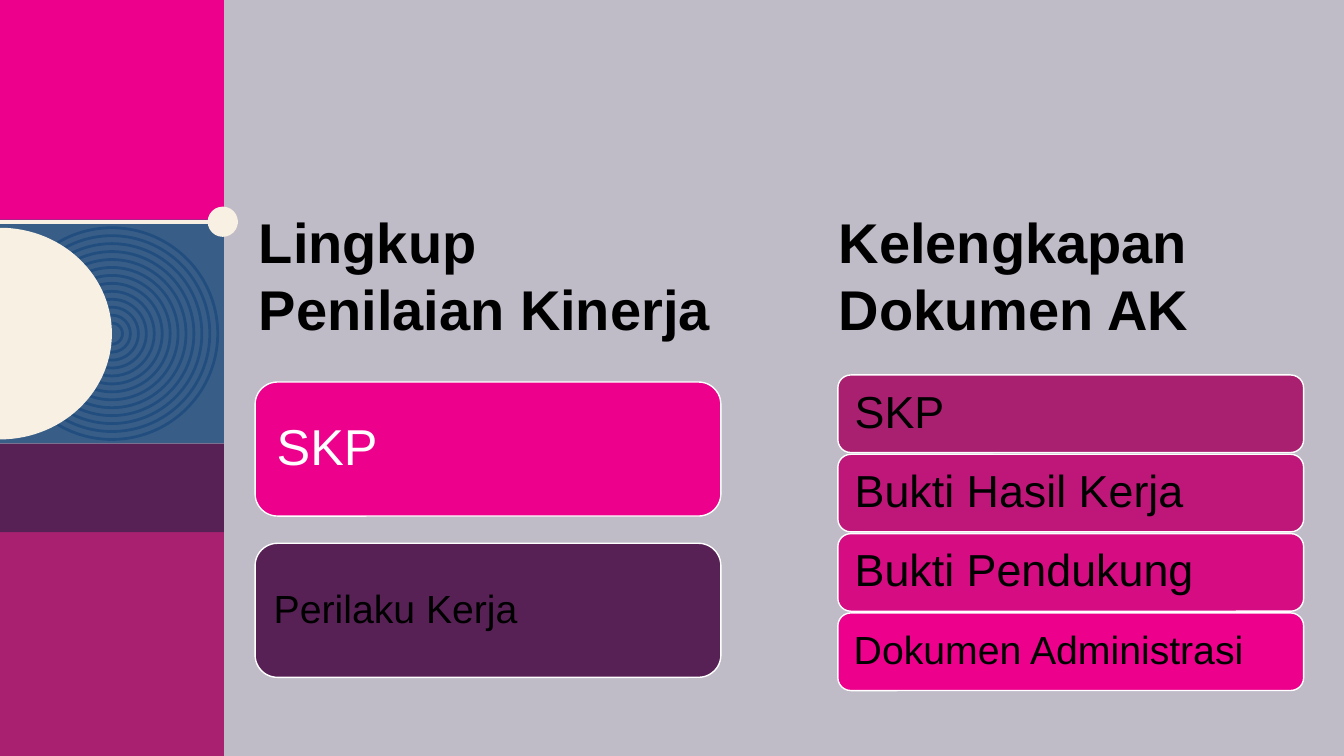
import math
from pptx import Presentation, util as u
from pptx.dml.color import RGBColor
from pptx.enum import shapes, text
from pptx.oxml.ns import qn
from lxml import etree

PINK, MAGENTA, PLUM = "EC008C", "AA2070", "582156"
BLUE, RING, CREAM = "385E88", "224E7F", "F8F0E3"
BLACK, WHITE, BACKGROUND = "000000", "FFFFFF", "BFBBC7"

# Side band: top, height, colour
BAND_WIDTH = 2.22
BAND = [(0, 2.22, PINK), (5.28, 2.22, MAGENTA), (2.18, 2.22, BLUE), (4.4, 0.88, PLUM)]
RING_COUNT, RING_OUTER, RING_INNER = 13, 2.1, 0.21
RING_CENTRE = (BAND_WIDTH / 2, 3.31)
RULE_Y, KNOB = 2.2, 0.3

# Cards: label, fill, text colour, size, inset
COLUMNS = [
    dict(heading=["Lingkup", "Penilaian Kinerja"], heading_left=2.47,
         left=2.53, top=3.79, height=1.33, pitch=1.6,
         cards=[("SKP", PINK, WHITE, 36, 0.15),
                ("Perilaku Kerja", PLUM, BLACK, 28, 0.12)]),
    dict(heading=["Kelengkapan Dokumen AK"], heading_left=8.22,
         left=8.31, top=3.72, height=0.77, pitch=0.787,
         cards=[("SKP", MAGENTA, BLACK, 32, 0.13),
                ("Bukti Hasil Kerja", "BF1779", BLACK, 32, 0.13),
                ("Bukti Pendukung", "D50C82", BLACK, 32, 0.13),
                ("Dokumen Administrasi", PINK, BLACK, 28, 0.12)]),
]
CARD_WIDTH = 4.62
HEADING_TOP, HEADING_WIDTH, HEADING_HEIGHT = 2.01, 5.75, 1.45


def colour(hex_string):
    return RGBColor.from_string(hex_string)


def paint(shape, fill=None, line=None, weight=1):
    shape.shadow.inherit = False
    if fill:
        shape.fill.solid()
        shape.fill.fore_color.rgb = colour(fill)
    else:
        shape.fill.background()
    if line:
        shape.line.color.rgb = colour(line)
        shape.line.width = u.Pt(weight)
    else:
        shape.line.fill.background()


def add_preset(slide, kind, left, top, width, height, **look):
    shape = slide.shapes.add_shape(kind, *map(u.Inches, (left, top, width, height)))
    paint(shape, **look)
    return shape


def write(shape, lines, size, ink=BLACK, bold=False, inset=None,
          anchor=text.MSO_ANCHOR.TOP, spacing=None):
    frame = shape.text_frame
    frame.word_wrap = True
    frame.vertical_anchor = anchor
    if inset is not None:
        frame.margin_left = frame.margin_right = u.Inches(inset)
        frame.margin_top = frame.margin_bottom = u.Inches(inset)
    for index, line in enumerate(lines):
        paragraph = frame.paragraphs[0] if index == 0 else frame.add_paragraph()
        paragraph.alignment = text.PP_ALIGN.LEFT
        paragraph.line_spacing = spacing
        run = paragraph.add_run()
        run.text = line
        run.font.name, run.font.size, run.font.bold = "Arial", u.Pt(size), bold
        run.font.color.rgb = colour(ink)


def add_half_disc(slide, centre_y, radius_x, radius_y, fill, steps=60):
    """Right half of an ellipse whose flat side lies on the slide's left edge."""
    angles = [math.pi * (step / steps - 0.5) for step in range(steps + 1)]
    points = [(u.Inches(radius_x * math.cos(a)), u.Inches(centre_y + radius_y * math.sin(a)))
              for a in angles]
    builder = slide.shapes.build_freeform(*points[0])
    builder.add_line_segments(points[1:], close=True)
    paint(builder.convert_to_shape(), fill=fill)


def add_side_band(slide):
    rect, oval = shapes.MSO_SHAPE.RECTANGLE, shapes.MSO_SHAPE.OVAL
    for top, height, fill in BAND:
        add_preset(slide, rect, 0, top, BAND_WIDTH, height, fill=fill)
    centre_x, centre_y = RING_CENTRE
    step = (RING_OUTER - RING_INNER) / (RING_COUNT - 1)
    for index in range(RING_COUNT):
        size = RING_OUTER - index * step
        add_preset(slide, oval, centre_x - size / 2, centre_y - size / 2, size, size,
                   line=RING, weight=2)
    add_half_disc(slide, centre_y, BAND_WIDTH / 2, RING_OUTER / 2, CREAM)

    knob_left = BAND_WIDTH - KNOB / 2 - 0.01
    rule = slide.shapes.add_connector(
        shapes.MSO_CONNECTOR.STRAIGHT, 0, u.Inches(RULE_Y),
        u.Inches(knob_left + KNOB), u.Inches(RULE_Y))
    rule.line.color.rgb = colour(CREAM)
    rule.line.width = u.Pt(3)
    etree.SubElement(rule._element.spPr, qn("a:effectLst"))
    add_preset(slide, oval, knob_left, RULE_Y - KNOB / 2, KNOB, KNOB, fill=CREAM)


def add_column(slide, column):
    heading = slide.shapes.add_textbox(*map(u.Inches, (
        column["heading_left"], HEADING_TOP, HEADING_WIDTH, HEADING_HEIGHT)))
    write(heading, column["heading"], 40, bold=True)
    for row, (label, fill, ink, size, inset) in enumerate(column["cards"]):
        card = add_preset(slide, shapes.MSO_SHAPE.ROUNDED_RECTANGLE, column["left"],
                          column["top"] + row * column["pitch"], CARD_WIDTH,
                          column["height"], fill=fill, line=WHITE)
        write(card, [label], size, ink=ink, inset=inset,
              anchor=text.MSO_ANCHOR.MIDDLE, spacing=0.9)


def main():
    deck = Presentation()
    deck.slide_width, deck.slide_height = u.Inches(13.33), u.Inches(7.5)
    slide = deck.slides.add_slide(deck.slide_layouts[6])
    slide.background.fill.solid()
    slide.background.fill.fore_color.rgb = colour(BACKGROUND)
    add_side_band(slide)
    for column in COLUMNS:
        add_column(slide, column)
    deck.save("out.pptx")


if __name__ == "__main__":
    main()
